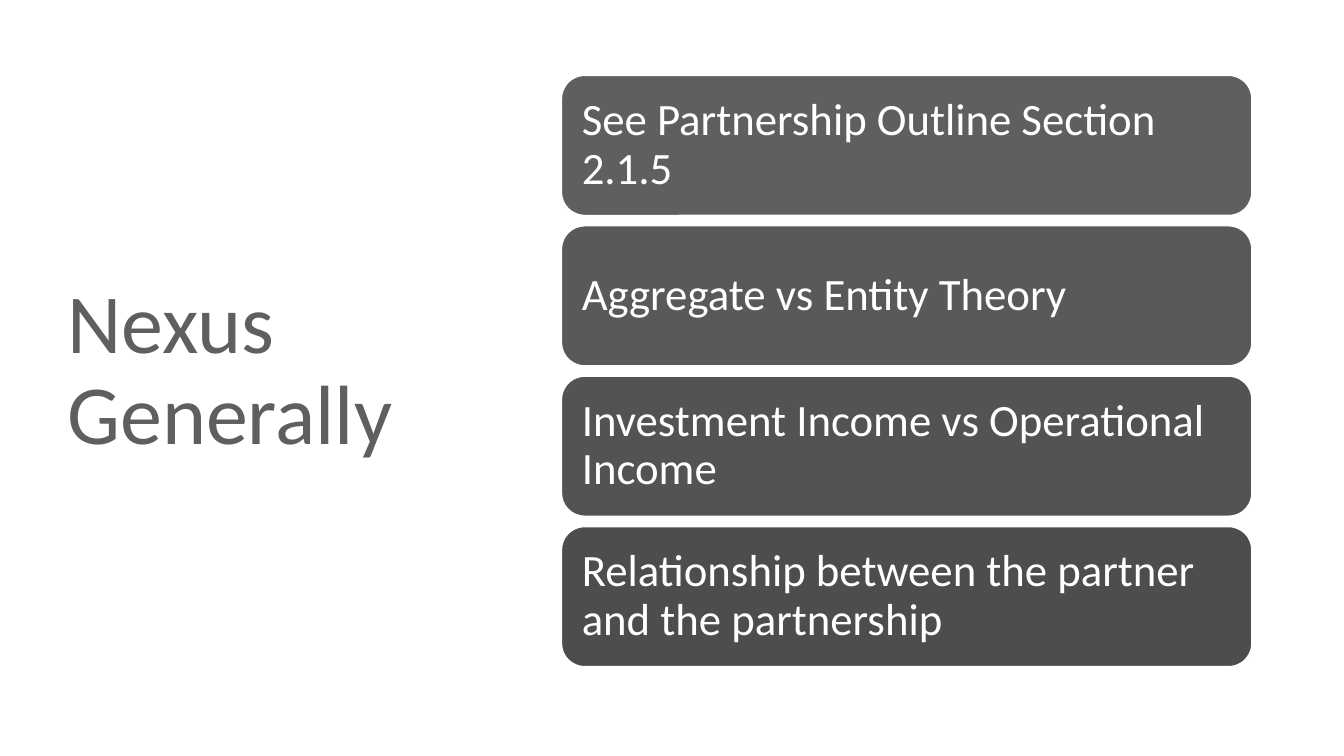
from pptx import Presentation
from pptx.dml.color import RGBColor
from pptx.enum.shapes import MSO_SHAPE
from pptx.enum.text import MSO_ANCHOR, PP_ALIGN
from pptx.util import Cm, Pt

ROUND = MSO_SHAPE.ROUNDED_RECTANGLE
MIDDLE = MSO_ANCHOR.MIDDLE
LEFT = PP_ALIGN.LEFT
FONT = "Calibri"
COLORS = {
    "title": "5F5F5F",
    "white": "FFFFFF",
    "first": "5F5F5F",
    "second": "595959",
    "third": "535353",
    "fourth": "4D4D4D",
}
TOPICS = [
    ("See Partnership Outline Section 2.1.5", "first"),
    ("Aggregate vs Entity Theory", "second"),
    ("Investment Income vs Operational Income", "third"),
    ("Relationship between the partner and the partnership", "fourth"),
]
TOP, PITCH = 1.9, 3.79


def color(name):
    """Return the named colour."""
    return RGBColor.from_string(COLORS[name])


def write(shape, text, size, tint, inset):
    """Put one left-aligned, vertically centred run into a shape."""
    frame = shape.text_frame
    frame.word_wrap = True
    frame.vertical_anchor = MIDDLE
    frame.margin_left = frame.margin_right = Cm(inset)
    frame.margin_top = frame.margin_bottom = Cm(inset)
    para = frame.paragraphs[0]
    para.alignment = LEFT
    para.line_spacing = 0.9
    run = para.add_run()
    run.text = text
    run.font.name = FONT
    run.font.size = Pt(size)
    run.font.color.rgb = color(tint)


def add_title(slide, text):
    """Add the large title on the left."""
    box = slide.shapes.add_textbox(Cm(1.45), Cm(1.73), Cm(10.57), Cm(15.29))
    write(box, text, 60, "title", 0.25)


def add_card(slide, top, text, fill):
    """Add one rounded topic card."""
    card = slide.shapes.add_shape(ROUND, Cm(14.15), Cm(top), Cm(17.4), Cm(3.53))
    card.shadow.inherit = False
    card.fill.solid()
    card.fill.fore_color.rgb = color(fill)
    card.line.color.rgb = color("white")
    card.line.width = Pt(1)
    write(card, text, 32, "white", 0.34)


def main():
    """Build and save the slide."""
    deck = Presentation()
    deck.slide_width, deck.slide_height = Cm(33.87), Cm(19.05)
    slide = deck.slides.add_slide(deck.slide_layouts[6])
    add_title(slide, "Nexus Generally")
    for row, (text, fill) in enumerate(TOPICS):
        add_card(slide, TOP + row * PITCH, text, fill)
    deck.save("out.pptx")


if __name__ == "__main__":
    main()
